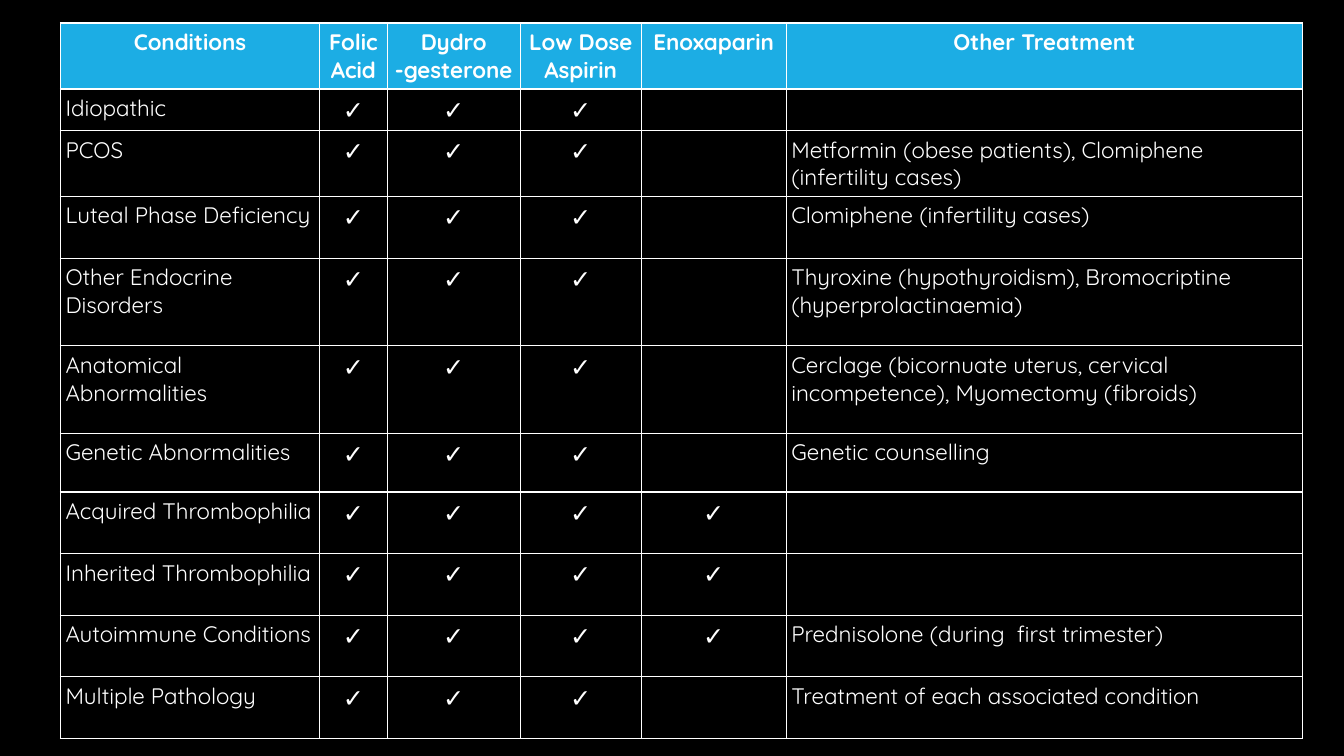
from lxml.etree import SubElement
from pptx import Presentation
from pptx.dml.color import RGBColor
from pptx.enum.text import PP_ALIGN
from pptx.oxml.ns import qn
from pptx.util import Inches, Pt

BLACK, WHITE, BLUE = "000000", "FFFFFF", "1CADE4"
TICK = "✓"


def color(hex_text):
    return RGBColor.from_string(hex_text)


class Page:
    """Holds the style and the slide; lengths are percent of the slide's size."""

    font_name = "Quicksand"
    text_size, tick_size = 16, 18
    margin = Inches(0.05)

    def __init__(self, deck):
        self.slide = deck.slides.add_slide(deck.slide_layouts[6])
        self.width, self.height = deck.slide_width, deck.slide_height
        background = self.slide.background.fill
        background.solid()
        background.fore_color.rgb = color(BLACK)

    def across(self, percent):
        return round(self.width * percent / 100)

    def down(self, percent):
        return round(self.height * percent / 100)

    def borders(self, cell):
        properties = cell._tc.get_or_add_tcPr()
        for side in ("lnL", "lnR", "lnT", "lnB"):
            line = SubElement(properties, qn(f"a:{side}"), w=str(Pt(1)))
            fill = SubElement(line, qn("a:solidFill"))
            SubElement(fill, qn("a:srgbClr"), val=WHITE)

    def cell(self, cell, text, fill, centered, bold):
        cell.margin_left = cell.margin_right = self.margin
        cell.margin_top = cell.margin_bottom = self.margin
        self.borders(cell)
        cell.fill.solid()
        cell.fill.fore_color.rgb = color(fill)
        frame = cell.text_frame
        for index, line in enumerate(text.split("\n")):
            para = frame.add_paragraph() if index else frame.paragraphs[0]
            para.alignment = PP_ALIGN.CENTER if centered else PP_ALIGN.LEFT
            if not line:
                para.font.size = Pt(self.text_size)
                continue
            span = para.add_run()
            span.text = line
            span.font.name = self.font_name
            span.font.size = Pt(self.tick_size if line == TICK else self.text_size)
            span.font.bold = bold
            span.font.color.rgb = color(WHITE)

    def table(self, left, top, columns, rows, records):
        table = self.slide.shapes.add_table(
            len(rows), len(columns), self.across(left), self.down(top),
            self.across(sum(columns)), self.down(sum(rows))).table
        table.first_row = table.horz_banding = False
        for column, share in zip(table.columns, columns):
            column.width = self.across(share)
        for row, share in zip(table.rows, rows):
            row.height = self.down(share)
        for r, record in enumerate(records):
            heading = r == 0
            for c, text in enumerate(record):
                self.cell(table.cell(r, c), text, BLUE if heading else BLACK,
                          heading or text == TICK, heading)


HEADINGS = ("Conditions", "Folic Acid", "Dydro -gesterone", "Low Dose Aspirin",
            "Enoxaparin", "Other Treatment")

# Condition, whether enoxaparin is given, other treatment
CONDITIONS = [
    ("Idiopathic", False, ""),
    ("PCOS", False, "Metformin (obese patients), Clomiphene (infertility cases)"),
    ("Luteal Phase Deficiency", False, "Clomiphene (infertility cases)"),
    ("Other Endocrine\nDisorders", False,
     "Thyroxine (hypothyroidism), Bromocriptine (hyperprolactinaemia)"),
    ("Anatomical\nAbnormalities", False,
     "Cerclage (bicornuate uterus, cervical incompetence), Myomectomy (fibroids)"),
    ("Genetic Abnormalities", False, "Genetic counselling"),
    ("Acquired Thrombophilia", True, ""),
    ("Inherited Thrombophilia", True, ""),
    ("Autoimmune Conditions", True, "Prednisolone (during  first trimester)"),
    ("Multiple Pathology", False, "Treatment of each associated condition"),
]

# Column and row sizes, in percent of the slide
COLUMNS = (19.28, 5.03, 9.9, 9, 10.8, 38.41)
ROWS = (8.15, 5.2, 8.15, 8.15, 11.6, 11.6, 7.75) + (8.15,) * 4


def main():
    deck = Presentation()
    deck.slide_width, deck.slide_height = Inches(13.33), Inches(7.5)
    page = Page(deck)

    # Treatment table: every condition gets the first three drugs
    records = [HEADINGS]
    for condition, enoxaparin, other in CONDITIONS:
        records.append((condition, TICK, TICK, TICK, TICK if enoxaparin else "", other))
    page.table(4.5, 3.05, COLUMNS, ROWS, records)

    deck.save("out.pptx")


if __name__ == "__main__":
    main()
